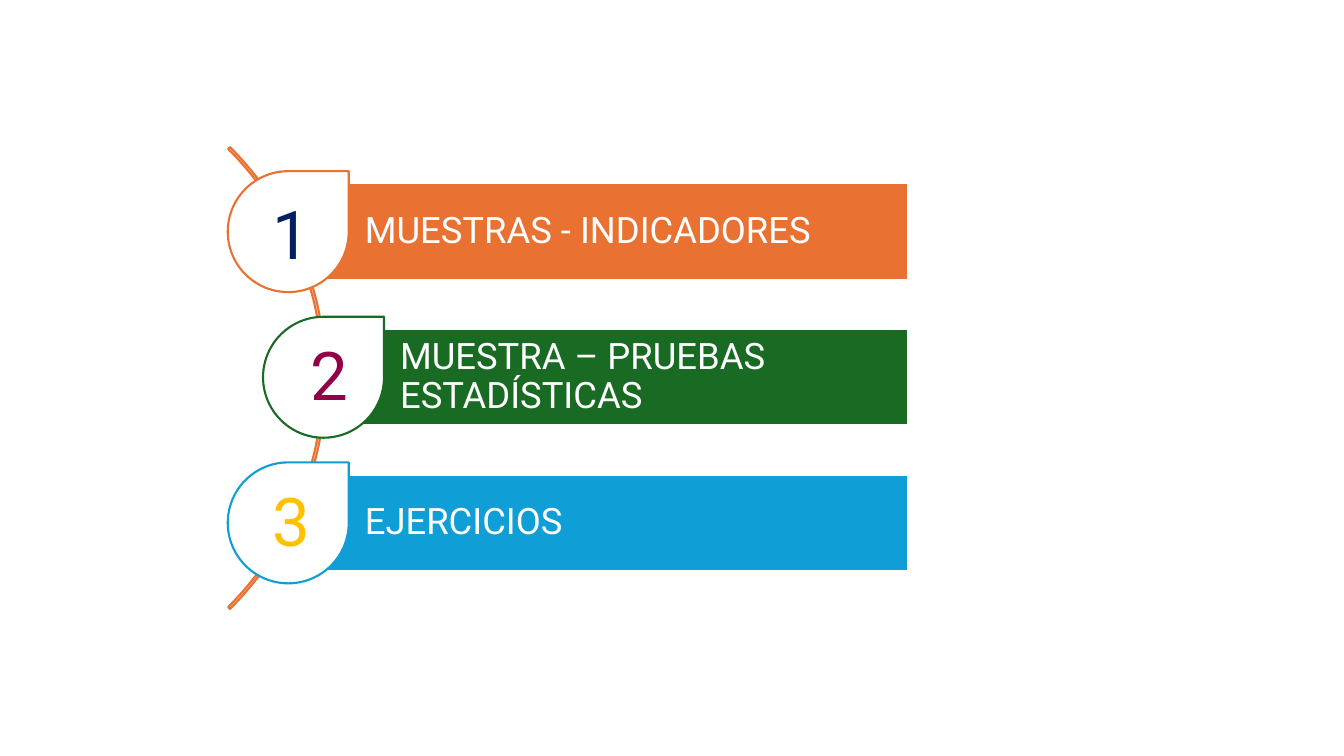
from pptx import Presentation
from pptx.dml.color import RGBColor
from pptx.enum.shapes import MSO_SHAPE
from pptx.enum.text import MSO_ANCHOR, MSO_AUTO_SIZE, PP_ALIGN
from pptx.util import Pt

BLOCK_ARC, BAR, TEARDROP = MSO_SHAPE.BLOCK_ARC, MSO_SHAPE.RECTANGLE, MSO_SHAPE.TEAR
MIDDLE = MSO_ANCHOR.MIDDLE
FIT_SHAPE = MSO_AUTO_SIZE.SHAPE_TO_FIT_TEXT
LEFT, CENTER = PP_ALIGN.LEFT, PP_ALIGN.CENTER

COLORS = {
    "white": "FFFFFF", "orange": "E97132", "green": "196B24", "blue": "0F9ED5",
    "navy": "002060", "plum": "910048", "gold": "FFC000",
}
FONT = "Roboto"

# text, bar color, bar left, number color, number left, number top
TOPICS = [
    ("MUESTRAS - INDICADORES", "orange", 205.9, "navy", 182.2, 133.9),
    ("MUESTRA – PRUEBAS ESTADÍSTICAS", "green", 231.1, "plum", 209.5, 234.7),
    ("EJERCICIOS", "blue", 205.9, "gold", 182.2, 339.1),
]
ARC_BOX = (-234, 36.7, 466.6, 466.6)
ARC_ADJUSTMENTS = (189, 27, 0.004)
BAR_TOP, BAR_HEIGHT, BAR_RIGHT, BAR_PITCH = 131, 69, 648.8, 104
DROP_SIZE = 86.4
NUMBER_WIDTH, NUMBER_HEIGHT = 51.8, 65.5


def rgb(name):
    return RGBColor.from_string(COLORS[name])


def add_outlined_shape(slide, kind, box, fill, line):
    shape = slide.shapes.add_shape(kind, *map(Pt, box))
    shape.shadow.inherit = False
    if fill:
        shape.fill.solid()
        shape.fill.fore_color.rgb = rgb(fill)
    else:
        shape.fill.background()
    shape.line.color.rgb = rgb(line)
    shape.line.width = Pt(1.5)
    return shape


def write(shape, text, size, color, alignment):
    paragraph = shape.text_frame.paragraphs[0]
    paragraph.text = text
    paragraph.alignment = alignment
    paragraph.font.name = FONT
    paragraph.font.size = Pt(size)
    paragraph.font.color.rgb = rgb(color)
    return paragraph


def add_topic_bar(slide, text, color, left, top):
    box = (left, top, BAR_RIGHT - left, BAR_HEIGHT)
    bar = add_outlined_shape(slide, BAR, box, color, "white")
    frame = bar.text_frame
    frame.word_wrap = True
    frame.vertical_anchor = MIDDLE
    frame.margin_left = Pt(54.7)
    frame.margin_top = frame.margin_right = frame.margin_bottom = Pt(5)
    write(bar, text, 26, "white", LEFT).line_spacing = 0.9


def add_number(slide, number, color, left, top):
    box = slide.shapes.add_textbox(Pt(left), Pt(top), Pt(NUMBER_WIDTH), Pt(NUMBER_HEIGHT))
    box.text_frame.word_wrap = True
    box.text_frame.auto_size = FIT_SHAPE
    write(box, str(number), 48, color, CENTER)


def main():
    presentation = Presentation()
    presentation.slide_width, presentation.slide_height = Pt(960), Pt(540)
    slide = presentation.slides.add_slide(presentation.slide_layouts[6])

    arc = add_outlined_shape(slide, BLOCK_ARC, ARC_BOX, None, "orange")
    for index, value in enumerate(ARC_ADJUSTMENTS):
        arc.adjustments[index] = value

    for index, (text, color, left, *_) in enumerate(TOPICS):
        top = BAR_TOP + index * BAR_PITCH
        add_topic_bar(slide, text, color, left, top)
        drop_top = top + (BAR_HEIGHT - DROP_SIZE) / 2
        drop_box = (left - DROP_SIZE / 2, drop_top, DROP_SIZE, DROP_SIZE)
        add_outlined_shape(slide, TEARDROP, drop_box, "white", color)

    for number, (*_, color, left, top) in enumerate(TOPICS, start=1):
        add_number(slide, number, color, left, top)

    presentation.save("out.pptx")


if __name__ == "__main__":
    main()
